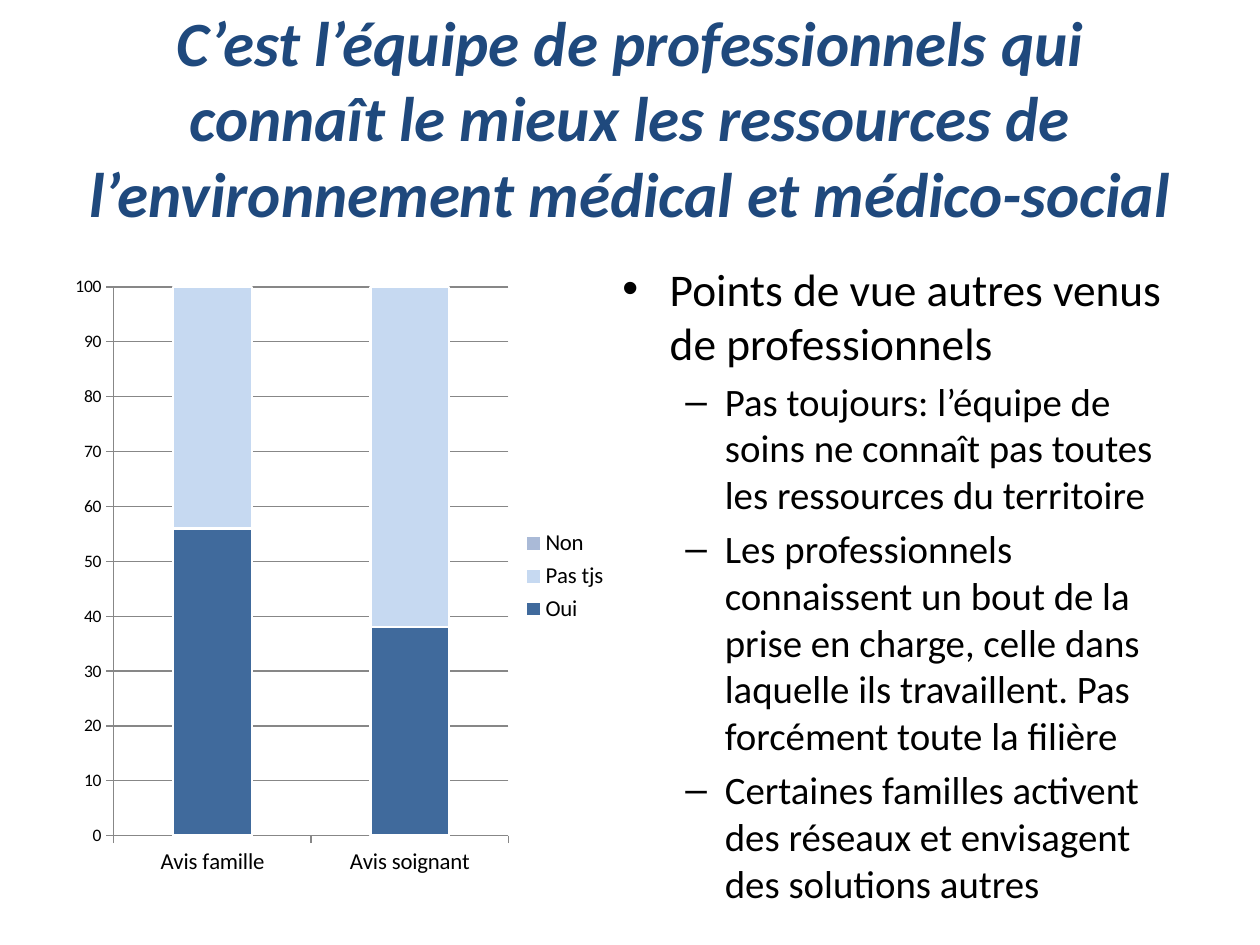
from pptx import Presentation
from pptx.chart.data import CategoryChartData
from pptx.dml.color import RGBColor
from pptx.enum.chart import XL_CHART_TYPE, XL_LEGEND_POSITION, XL_TICK_MARK
from pptx.enum.text import MSO_ANCHOR, MSO_AUTO_SIZE, PP_ALIGN
from pptx.util import Inches, Pt

STACKED = XL_CHART_TYPE.COLUMN_STACKED
RIGHT = XL_LEGEND_POSITION.RIGHT
OUTSIDE = XL_TICK_MARK.OUTSIDE
MIDDLE = MSO_ANCHOR.MIDDLE
NO_AUTOFIT = MSO_AUTO_SIZE.NONE
CENTER = PP_ALIGN.CENTER

FONT = "Calibri"
NAVY = RGBColor(0x1F, 0x49, 0x7D)
BLACK = RGBColor(0, 0, 0)
WHITE = RGBColor(0xFF, 0xFF, 0xFF)
GREY = RGBColor(0x87, 0x87, 0x87)
BLUE = RGBColor(0x40, 0x6A, 0x9C)
PALE_BLUE = RGBColor(0xC6, 0xD9, 0xF1)
GREY_BLUE = RGBColor(0xAA, 0xBA, 0xD7)

TITLE = ("C’est l’équipe de professionnels qui connaît le mieux les ressources "
         "de l’environnement médical et médico-social")
POINTS = [
    (0, "Points de vue autres venus de professionnels"),
    (1, "Pas toujours: l’équipe de soins ne connaît pas toutes les ressources "
        "du territoire"),
    (1, "Les professionnels connaissent un bout de la prise en charge, celle "
        "dans laquelle ils travaillent. Pas forcément toute la filière"),
    (1, "Certaines familles activent des réseaux et envisagent des solutions "
        "autres"),
]
LEVEL_SIZES = (25.9, 22.2)
OPINIONS = ["Avis famille", "Avis soignant"]
ANSWERS = [
    ("Oui", (56, 38), BLUE),
    ("Pas tjs", (44, 62), PALE_BLUE),
    ("Non", (0, 0), GREY_BLUE),
]


class SlideBuilder:
    def __init__(self, slide):
        self.slide = slide

    def style(self, font, size, color=BLACK):
        font.name = FONT
        font.size = Pt(size)
        font.color.rgb = color

    def place(self, shape, left, top, width, height):
        shape.left, shape.top = Inches(left), Inches(top)
        shape.width, shape.height = Inches(width), Inches(height)

    def title(self, text, *box):
        shape = self.slide.shapes.title
        self.place(shape, *box)
        frame = shape.text_frame
        frame.text = text
        frame.auto_size = NO_AUTOFIT
        frame.vertical_anchor = MIDDLE
        paragraph = frame.paragraphs[0]
        paragraph.alignment = CENTER
        self.style(paragraph.font, 36, NAVY)
        paragraph.font.bold = paragraph.font.italic = True

    def bullets(self, points, *box):
        shape = self.slide.placeholders[1]
        self.place(shape, *box)
        frame = shape.text_frame
        frame.text = "\n".join(text for _, text in points)
        frame.auto_size = NO_AUTOFIT
        for paragraph, (level, _) in zip(frame.paragraphs, points):
            paragraph.level = level
            self.style(paragraph.font, LEVEL_SIZES[level])

    def axis(self, axis, size):
        axis.major_tick_mark = OUTSIDE
        axis.format.line.color.rgb = GREY
        self.style(axis.tick_labels.font, size)

    def stacked_chart(self, categories, answers, *box):
        data = CategoryChartData()
        data.categories = categories
        for name, values, _ in answers:
            data.add_series(name, values)
        chart = self.slide.shapes.add_chart(
            STACKED, *map(Inches, box), data).chart
        chart.has_title = False
        self.style(chart.font, 10)

        self.axis(chart.category_axis, 13)
        value_axis = chart.value_axis
        self.axis(value_axis, 10)
        value_axis.minimum_scale = 0
        value_axis.maximum_scale = 100
        value_axis.major_unit = 10
        value_axis.major_gridlines.format.line.color.rgb = GREY

        chart.has_legend = True
        chart.legend.position = RIGHT
        chart.legend.include_in_layout = False
        self.style(chart.legend.font, 13)

        plot = chart.plots[0]
        plot.gap_width = 150
        plot.overlap = 100
        plot.vary_by_categories = False
        for series, (_, _, color) in zip(plot.series, answers):
            series.format.fill.solid()
            series.format.fill.fore_color.rgb = color
            series.format.line.color.rgb = WHITE
            series.format.line.width = Pt(1.5)


def main():
    presentation = Presentation()
    presentation.slide_width = Inches(10)
    presentation.slide_height = Inches(7.5)
    title_and_content = presentation.slide_layouts[1]
    builder = SlideBuilder(presentation.slides.add_slide(title_and_content))
    builder.title(TITLE, 0.5, 0.3, 9, 1.25)
    builder.bullets(POINTS, 4.84, 2.02, 4.73, 4.95)
    builder.stacked_chart(OPINIONS, ANSWERS, 0.51, 2.1, 4.42, 4.95)
    presentation.save("out.pptx")


if __name__ == "__main__":
    main()
